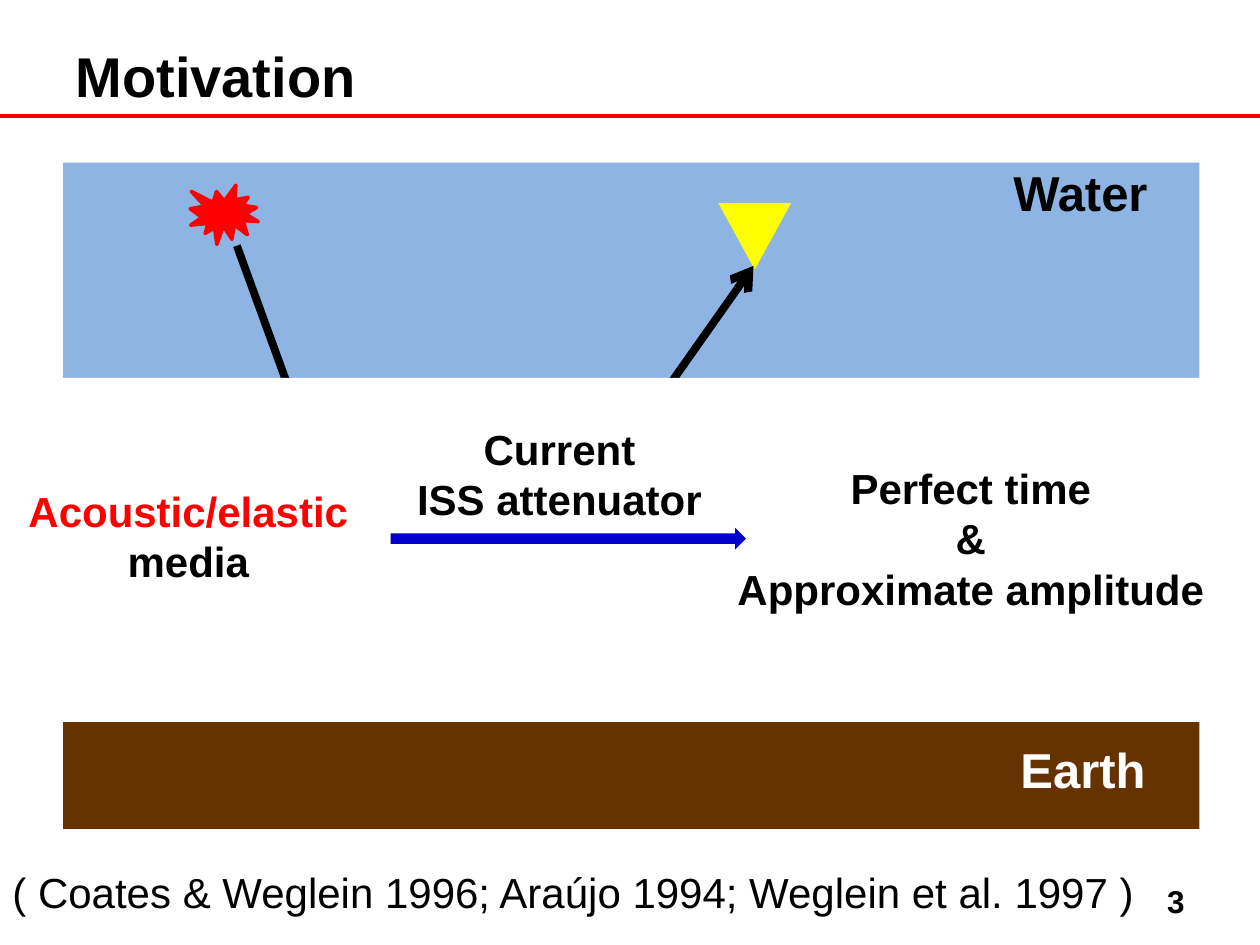
from pptx import Presentation
from pptx.dml.color import RGBColor
from pptx.enum.shapes import MSO_CONNECTOR, MSO_SHAPE
from pptx.enum.text import MSO_ANCHOR, PP_ALIGN
from pptx.oxml.ns import qn
from pptx.util import Inches, Pt
from lxml import etree

RECT = MSO_SHAPE.RECTANGLE
BURST = MSO_SHAPE.EXPLOSION1
MERGE = MSO_SHAPE.FLOWCHART_MERGE
ARROW = MSO_SHAPE.RIGHT_ARROW
LINE = MSO_CONNECTOR.STRAIGHT
LEFT, MID, RIGHT = PP_ALIGN.LEFT, PP_ALIGN.CENTER, PP_ALIGN.RIGHT
TOP, CENTER = MSO_ANCHOR.TOP, MSO_ANCHOR.MIDDLE

BLACK, WHITE, RED = "000000", "FFFFFF", "FF0000"
TITLE = [[("Motivation", BLACK)]]
RULE = ((0, 0.92), (10, 0.92), RED, 2.25)

LAYERS = [
    (RECT, (0.5, 1.29, 9.02, 3.24), "8EB4E3", 0),
    (RECT, (0.5, 3.61, 9.02, 2.97), "663300", 0),
    (BURST, (1.51, 1.47, 0.54, 0.47), RED, 2),
    (MERGE, (5.7, 1.61, 0.58, 0.53), "FFFF00", 0),
]
RAYS = [
    ((1.88, 1.95), (2.82, 4.53), BLACK, 4.5),
    ((4.21, 4.62), (5.98, 2.11), BLACK, 4.5),
]
PANEL = [
    (RECT, (0.08, 3, 9.75, 2.73), WHITE, 0),
    (ARROW, (3.1, 4.19, 2.82, 0.17), "0000CC", 0),
]
LABELS = [
    ((7.5, 1.24, 2.15, 0.57), [[("Water", BLACK)]], {"size": 28}),
    ((7.52, 5.82, 2.15, 0.57), [[("Earth", WHITE)]], {"size": 28}),
    ((5.68, 3.62, 4.05, 1.31),
     [[("Perfect time", BLACK)], [("&", BLACK)],
      [("Approximate amplitude", BLACK)]], {}),
    ((0.08, 3.8, 2.83, 0.91),
     [[("Acoustic/elastic", RED), (" media", BLACK)]], {}),
    ((3.03, 3.31, 2.82, 0.91),
     [[("Current", BLACK)], [("ISS attenuator", BLACK)]], {}),
    ((0, 6.83, 9.38, 0.5),
     [[("( Coates & Weglein 1996; Araújo 1994; Weglein et al. 1997 )", BLACK)]],
     {"bold": False, "align": LEFT, "wrap": False}),
    ((7.17, 6.95, 2.33, 0.4), [[("3", BLACK)]],
     {"size": 18, "align": RIGHT, "anchor": CENTER}),
]


def color(code):
    return RGBColor.from_string(code)


def write(shape, paras, size=24, bold=True, align=MID, anchor=TOP,
          wrap=True, space=None):
    frame = shape.text_frame
    frame.word_wrap = wrap
    frame.vertical_anchor = anchor
    for i, runs in enumerate(paras):
        para = frame.add_paragraph() if i else frame.paragraphs[0]
        para.alignment = align
        if space:
            para.line_spacing = space
        for words, code in runs:
            run = para.add_run()
            run.text = words
            run.font.name = "Arial"
            run.font.size = Pt(size)
            run.font.bold = bold
            run.font.color.rgb = color(code)


def draw(slide, kind, box, fill, width):
    shape = slide.shapes.add_shape(kind, *map(Inches, box))
    shape.shadow.inherit = False
    shape.fill.solid()
    shape.fill.fore_color.rgb = color(fill)
    if width:
        shape.line.color.rgb = color(fill)
        shape.line.width = Pt(width)
    else:
        shape.line.fill.background()


def join(slide, start, end, code, width, head=False):
    line = slide.shapes.add_connector(LINE, *map(Inches, start + end))
    line.line.color.rgb = color(code)
    line.line.width = Pt(width)
    if head:
        etree.SubElement(line.line._get_or_add_ln(), qn("a:tailEnd"), type="arrow")
    etree.SubElement(line._element.spPr, qn("a:effectLst"))


def main():
    deck = Presentation()
    deck.slide_width, deck.slide_height = Inches(10), Inches(7.5)
    slide = deck.slides.add_slide(deck.slide_layouts[5])
    title = slide.shapes.title
    title.left, title.top, title.width, title.height = map(Inches, (0.5, 0, 9, 0.92))
    write(title, TITLE, size=32, align=LEFT, anchor=CENTER, space=1.5)

    join(slide, *RULE)
    for item in LAYERS:
        draw(slide, *item)
    for ray in RAYS:
        join(slide, *ray, head=True)
    for item in PANEL:
        draw(slide, *item)
    for box, paras, style in LABELS:
        write(slide.shapes.add_textbox(*map(Inches, box)), paras, **style)
    deck.save("out.pptx")


if __name__ == "__main__":
    main()
